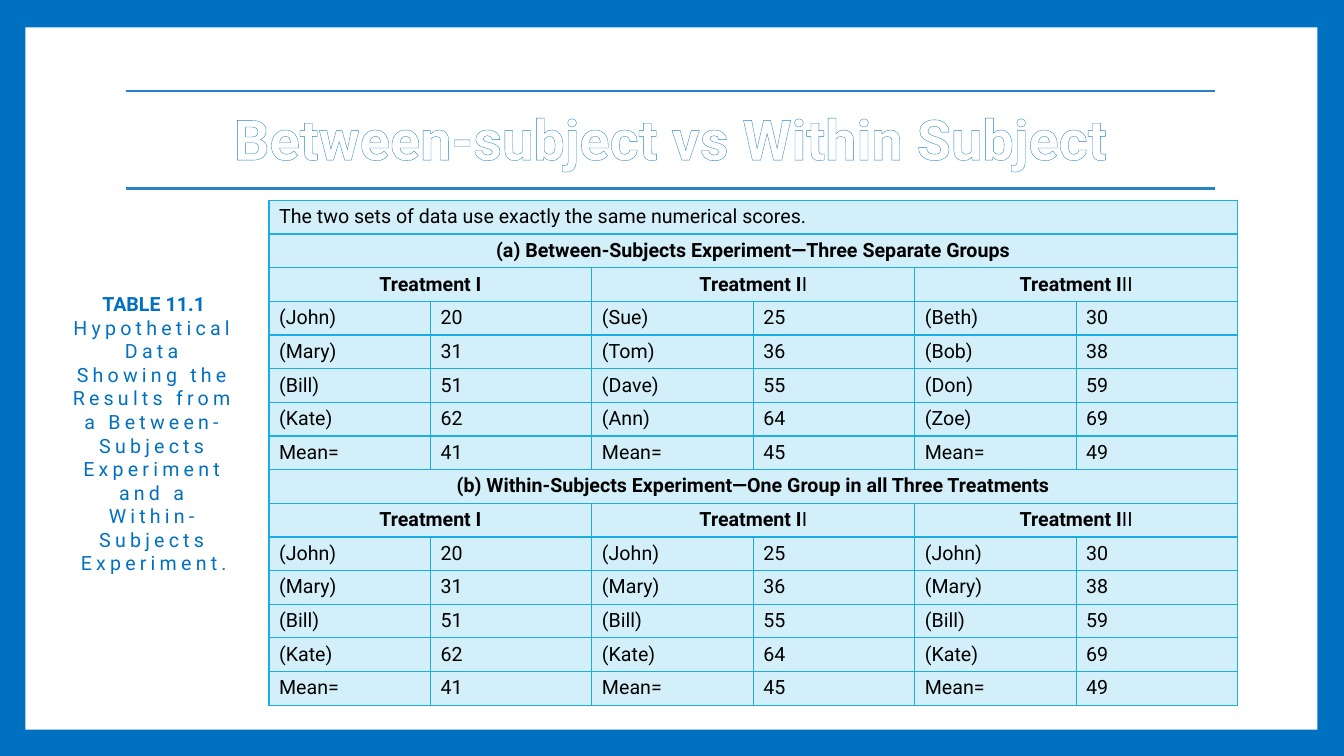
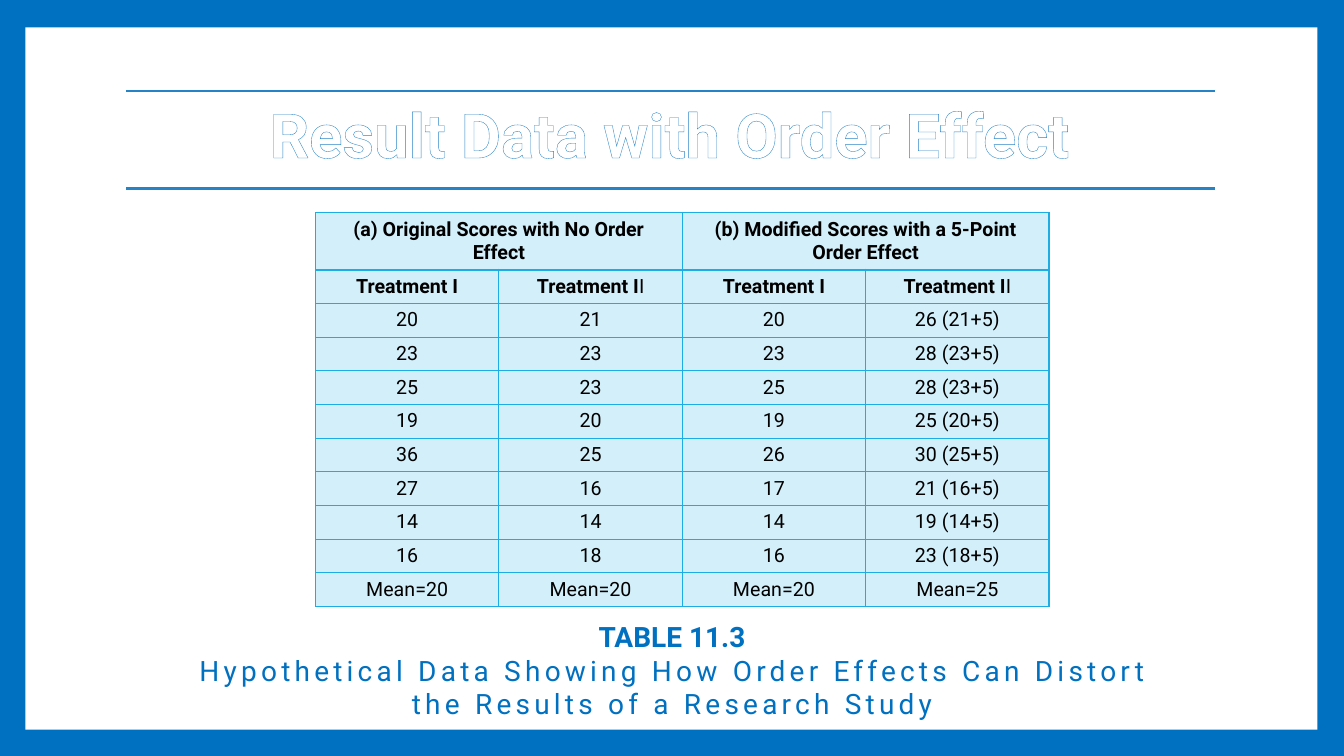
from dataclasses import dataclass
from copy import deepcopy

from lxml.etree import SubElement
from pptx import Presentation
from pptx.dml.color import RGBColor
from pptx.enum.shapes import MSO_CONNECTOR, MSO_SHAPE
from pptx.enum.text import MSO_ANCHOR, MSO_AUTO_SIZE, PP_ALIGN
from pptx.oxml.ns import qn
from pptx.slide import Slide
from pptx.table import _Cell
from pptx.text.text import _Run
from pptx.util import Cm, Pt

FONT = "Roboto"
BLUE = RGBColor(0x00, 0x70, 0xC0)
RULE = RGBColor(0x26, 0x83, 0xC6)
EDGE = RGBColor(0x1C, 0xAD, 0xE4)
PALE = RGBColor(0xD2, 0xEF, 0xFA)
WHITE = RGBColor(0xFF, 0xFF, 0xFF)
BLACK = RGBColor(0x00, 0x00, 0x00)

Row = tuple[str, ...]


@dataclass(frozen=True)
class Box:
    left: float
    top: float
    width: float
    height: float

    def place(self) -> tuple[Cm, Cm, Cm, Cm]:
        return Cm(self.left), Cm(self.top), Cm(self.width), Cm(self.height)


@dataclass(frozen=True)
class Title:
    text: str
    box: Box
    size: int


@dataclass(frozen=True)
class Legend:
    label: str
    lines: Row
    box: Box
    size: int


@dataclass(frozen=True)
class Grid:
    rows: list[Row]
    heads: set[int]
    left: float
    top: float
    width: float
    count: int
    middle: bool


@dataclass(frozen=True)
class Page:
    title: Title
    legend: Legend
    grid: Grid


PANEL = Box(0.64, 0.69, 32.56, 17.7)
RULES = (4.75, 2.29)
START, END = 3.18, 30.61
HIGH = 0.84

HEADS = ("Treatment I", "Treatment I|I", "Treatment I|II")
SCORES = (
    ("20", "25", "30"),
    ("31", "36", "38"),
    ("51", "55", "59"),
    ("62", "64", "69"),
    ("41", "45", "49"),
)
GROUPS = (
    ("(John)", "(Sue)", "(Beth)"),
    ("(Mary)", "(Tom)", "(Bob)"),
    ("(Bill)", "(Dave)", "(Don)"),
    ("(Kate)", "(Ann)", "(Zoe)"),
)


def pair(names: tuple[Row, ...]) -> list[Row]:
    full = (*names, ("Mean=",) * 3)
    return [
        tuple(part for both in zip(who, marks) for part in both)
        for who, marks in zip(full, SCORES)
    ]


PAGES = (
    Page(
        Title("Between-subject vs Within Subject", Box(3.18, 1.7, 27.43, 3.76), 40),
        Legend(
            "TABLE 11.1",
            (
                "Hypothetical Data Showing the Results from a Between-Subjects "
                "Experiment and a Within-Subjects Experiment.",
            ),
            Box(1.45, 7.24, 4.72, 7.44),
            14,
        ),
        Grid(
            [
                ("The two sets of data use exactly the same numerical scores.",),
                ("(a) Between-Subjects Experiment—Three Separate Groups",),
                HEADS,
                *pair(GROUPS),
                ("(b) Within-Subjects Experiment—One Group in all Three Treatments",),
                HEADS,
                *pair(tuple((names[0],) * 3 for names in GROUPS)),
            ],
            {1, 2, 8, 9},
            6.78, 5.05, 24.41, 6, False,
        ),
    ),
    Page(
        Title("Result Data with Order Effect", Box(3.25, 1.6, 27.28, 3.76), 44),
        Legend(
            "TABLE 11.3",
            (
                "Hypothetical Data Showing How Order Effects Can Distort",
                "the Results of a Research Study",
            ),
            Box(1.37, 15.49, 31.01, 2.82),
            20,
        ),
        Grid(
            [
                (
                    "(a) Original Scores with No Order Effect",
                    "(b) Modified Scores with a 5-Point Order Effect",
                ),
                HEADS[:2] * 2,
                ("20", "21", "20", "26 (21+5)"),
                ("23", "23", "23", "28 (23+5)"),
                ("25", "23", "25", "28 (23+5)"),
                ("19", "20", "19", "25 (20+5)"),
                ("36", "25", "26", "30 (25+5)"),
                ("27", "16", "17", "21 (16+5)"),
                ("14", "14", "14", "19 (14+5)"),
                ("16", "18", "16", "23 (18+5)"),
                ("Mean=20", "Mean=20", "Mean=20", "Mean=25"),
            ],
            {0, 1},
            7.95, 5.36, 18.49, 4, True,
        ),
    ),
)


def style(run: _Run, size: int, color: RGBColor, bold: bool) -> None:
    run.font.name = FONT
    run.font.size = Pt(size)
    run.font.color.rgb = color
    run.font.bold = bold


def stroke(parent, tag: str, color: RGBColor, width: float):
    line = SubElement(parent, qn(tag), w=str(Pt(width)))
    fill = SubElement(line, qn("a:solidFill"))
    SubElement(fill, qn("a:srgbClr"), val=str(color))
    return line


def frame(slide: Slide) -> None:
    panel = slide.shapes.add_shape(MSO_SHAPE.RECTANGLE, *PANEL.place())
    panel.shadow.inherit = False
    panel.fill.solid()
    panel.fill.fore_color.rgb = WHITE
    panel.line.fill.background()
    for level in RULES:
        rule = slide.shapes.add_connector(
            MSO_CONNECTOR.STRAIGHT, Cm(START), Cm(level), Cm(END), Cm(level)
        )
        rule.line.color.rgb = RULE
        rule.line.width = Pt(1.5)
        SubElement(rule._element.spPr, qn("a:effectLst"))


def head(slide: Slide, title: Title) -> None:
    text = slide.shapes.add_textbox(*title.box.place()).text_frame
    text.word_wrap = True
    text.vertical_anchor = MSO_ANCHOR.MIDDLE
    text.text = title.text
    para = text.paragraphs[0]
    para.alignment = PP_ALIGN.CENTER
    para.line_spacing = 0.9
    run = para.runs[0]
    style(run, title.size, WHITE, True)
    props = run._r.get_or_add_rPr()
    props.insert(0, stroke(props, "a:ln", RULE, 0.52))


def note(slide: Slide, legend: Legend) -> None:
    text = slide.shapes.add_textbox(*legend.box.place()).text_frame
    text.word_wrap = True
    text.auto_size = MSO_AUTO_SIZE.SHAPE_TO_FIT_TEXT
    text.text = legend.label + "\v" + "\n".join(legend.lines)
    for para in text.paragraphs:
        para.alignment = PP_ALIGN.CENTER
        para._p.get_or_add_pPr().set("marL", str(Cm(0.13)))
        for run in para.runs:
            bold = run.text == legend.label
            style(run, legend.size, BLUE, bold)
            if not bold:
                run._r.get_or_add_rPr().set("spc", "300")
        for gap in para._p.findall(qn("a:br")):
            gap.append(deepcopy(para.runs[0]._r.get_or_add_rPr()))


def paint(cell: _Cell, base: float) -> None:
    props = cell._tc.get_or_add_tcPr()
    for side in "LRTB":
        stroke(props, f"a:ln{side}", EDGE, base if side == "B" else 1)
    cell.fill.solid()
    cell.fill.fore_color.rgb = PALE


def write(cell: _Cell, words: str, bold: bool, center: bool) -> None:
    main, _, tail = words.partition("|")
    cell.text_frame.text = main
    para = cell.text_frame.paragraphs[0]
    para.alignment = PP_ALIGN.CENTER if center else PP_ALIGN.LEFT
    style(para.runs[0], 14, BLACK, bold)
    if tail:
        extra = para.add_run()
        extra.text = tail
        style(extra, 14, BLACK, False)


def chart(slide: Slide, grid: Grid) -> None:
    size = len(grid.rows)
    box = Box(grid.left, grid.top, grid.width, HIGH * size)
    table = slide.shapes.add_table(size, grid.count, *box.place()).table
    table.first_row = False
    table.horz_banding = False
    for line, row in enumerate(grid.rows):
        table.rows[line].height = Cm(HIGH)
        for spot in range(grid.count):
            paint(table.cell(line, spot), 1 if line else 2)
        span = grid.count // len(row)
        bold = line in grid.heads
        for spot, words in enumerate(row):
            cell = table.cell(line, spot * span)
            if span > 1:
                cell.merge(table.cell(line, (spot + 1) * span - 1))
            write(cell, words, bold, bold or grid.middle)


def main() -> None:
    deck = Presentation()
    deck.slide_width = Cm(33.87)
    deck.slide_height = Cm(19.05)
    back = deck.slide_master.background.fill
    back.solid()
    back.fore_color.rgb = BLUE
    for page in PAGES:
        slide = deck.slides.add_slide(deck.slide_layouts[6])
        frame(slide)
        head(slide, page.title)
        note(slide, page.legend)
        chart(slide, page.grid)
    deck.save("out.pptx")


if __name__ == "__main__":
    main()
